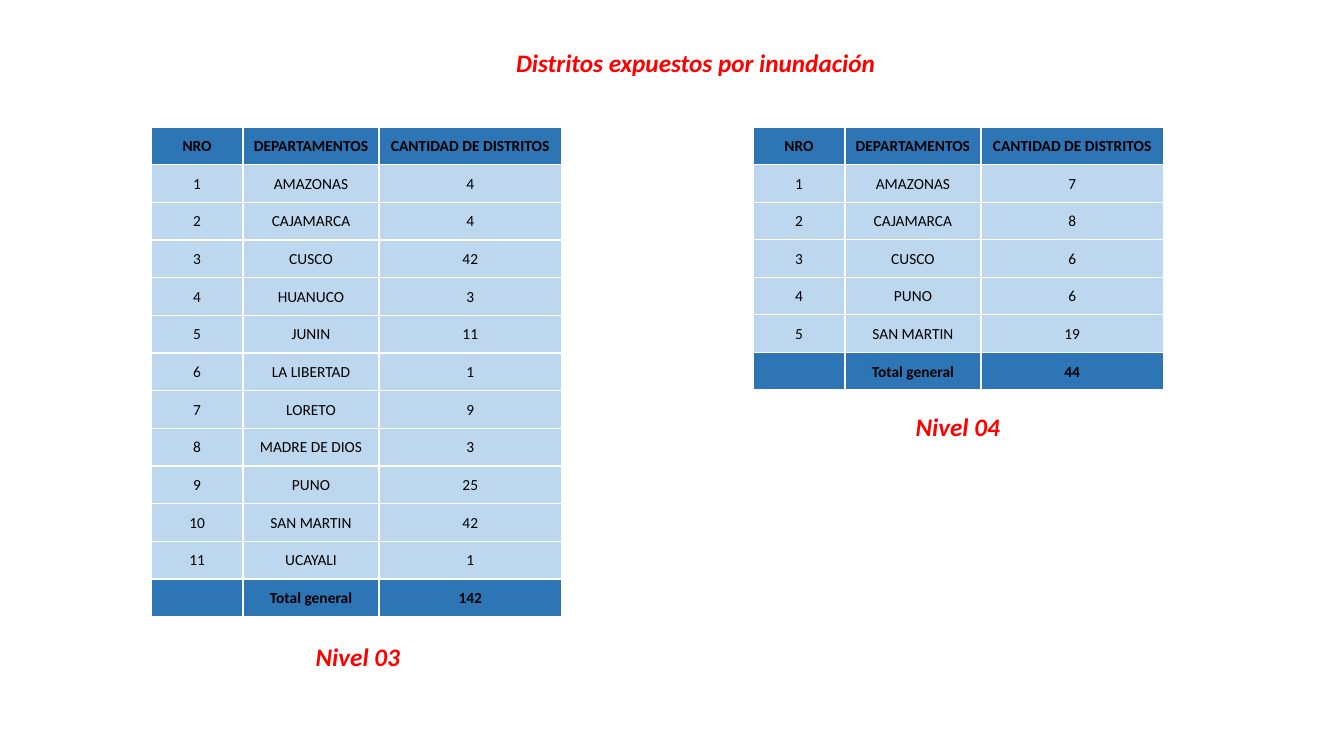
from dataclasses import dataclass

import lxml.etree
import pptx
import pptx.dml.color
import pptx.enum.text
import pptx.oxml.ns
import pptx.util

Inches = pptx.util.Inches
COLORS = {"title": "FF0000", "text": "000000", "band": "2E75B6",
          "body": "BDD7EE", "border": "FFFFFF"}
FONT = "Calibri"
HEADERS = ("NRO", "DEPARTAMENTOS", "CANTIDAD DE DISTRITOS")
COL_WIDTHS = (0.91, 1.35, 1.81)
TABLE_TOP = 1.26


@dataclass
class Label:
    text: str
    left: float
    top: float
    width: float
    wrap: bool = True


@dataclass
class Level:
    left: float
    height: float
    districts: dict[str, int]
    total: int
    label: Label


TITLE = Label("Distritos expuestos por inundación", 5, 0.42, 3.8, wrap=False)
LEVELS = [
    Level(1.5, 4.86,
          {"AMAZONAS": 4, "CAJAMARCA": 4, "CUSCO": 42, "HUANUCO": 3,
           "JUNIN": 11, "LA LIBERTAD": 1, "LORETO": 9, "MADRE DE DIOS": 3,
           "PUNO": 25, "SAN MARTIN": 42, "UCAYALI": 1},
          142, Label("Nivel 03", 2.95, 6.31, 1.2)),
    Level(7.47, 2.61,
          {"AMAZONAS": 7, "CAJAMARCA": 8, "CUSCO": 6, "PUNO": 6,
           "SAN MARTIN": 19},
          44, Label("Nivel 04", 8.9, 4.03, 1.2)),
]


def rgb(name: str) -> pptx.dml.color.RGBColor:
    return pptx.dml.color.RGBColor.from_string(COLORS[name])


def write_text(tf, text: str, *, size: float, color: str,
               bold: bool = False, italic: bool = False) -> None:
    p = tf.paragraphs[0]
    p.alignment = pptx.enum.text.PP_ALIGN.CENTER
    r = p.add_run()
    r.text = text
    r.font.name = FONT
    r.font.size = pptx.util.Pt(size)
    r.font.bold = bold
    r.font.italic = italic
    r.font.color.rgb = rgb(color)


def add_label(s, label: Label) -> None:
    sp = s.shapes.add_textbox(Inches(label.left), Inches(label.top),
                              Inches(label.width), Inches(0.4))
    tf = sp.text_frame
    tf.word_wrap = label.wrap
    tf.auto_size = pptx.enum.text.MSO_AUTO_SIZE.SHAPE_TO_FIT_TEXT
    write_text(tf, label.text, size=18, color="title", bold=True, italic=True)


def add_borders(cell) -> None:
    qn = pptx.oxml.ns.qn
    tc_pr = cell._tc.get_or_add_tcPr()
    for side in ("lnL", "lnR", "lnT", "lnB"):
        ln = lxml.etree.SubElement(tc_pr, qn(f"a:{side}"),
                                   w=str(pptx.util.Pt(1)))
        fill = lxml.etree.SubElement(ln, qn("a:solidFill"))
        lxml.etree.SubElement(fill, qn("a:srgbClr"), val=COLORS["border"])


def format_cell(cell, text: str, band: bool) -> None:
    cell.margin_left = cell.margin_right = cell.margin_top = Inches(0.01)
    cell.margin_bottom = 0
    cell.vertical_anchor = pptx.enum.text.MSO_ANCHOR.MIDDLE
    add_borders(cell)
    cell.fill.solid()
    cell.fill.fore_color.rgb = rgb("band" if band else "body")
    if text:
        write_text(cell.text_frame, text, size=11, color="text", bold=band)


def add_level(s, level: Level) -> None:
    body = [(str(n), name, str(count))
            for n, (name, count) in enumerate(level.districts.items(), 1)]
    rows = [HEADERS, *body, ("", "Total general", str(level.total))]
    table = s.shapes.add_table(
        len(rows), len(HEADERS), Inches(level.left), Inches(TABLE_TOP),
        Inches(sum(COL_WIDTHS)), Inches(level.height)).table
    table.horz_banding = False
    for col, width in zip(table.columns, COL_WIDTHS):
        col.width = Inches(width)
    for i, row in enumerate(rows):
        for j, text in enumerate(row):
            format_cell(table.cell(i, j), text, band=i in (0, len(rows) - 1))
    add_label(s, level.label)


def main() -> None:
    prs = pptx.Presentation()
    prs.slide_width, prs.slide_height = Inches(13.33), Inches(7.5)
    s = prs.slides.add_slide(prs.slide_layouts[6])

    # Title
    add_label(s, TITLE)

    # One table and caption per exposure level
    for level in LEVELS:
        add_level(s, level)

    prs.save("out.pptx")


if __name__ == "__main__":
    main()
